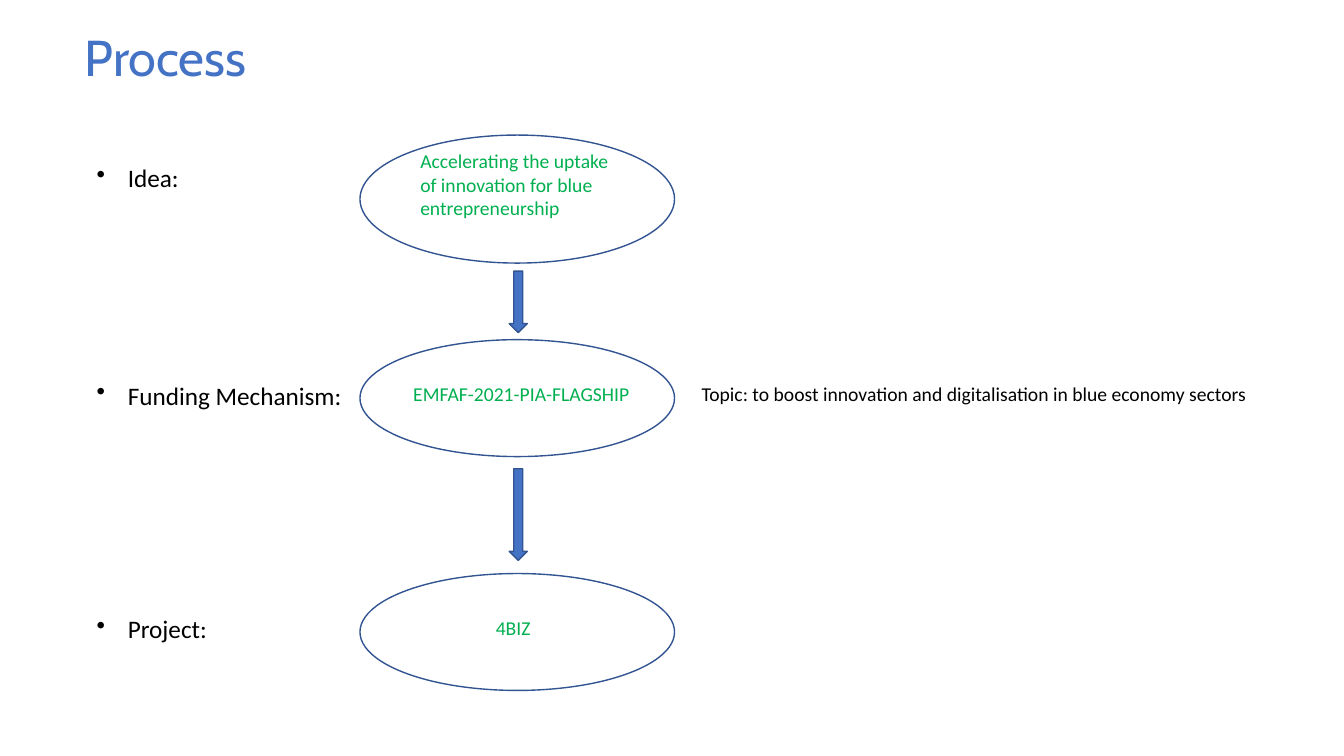
from pptx import Presentation
from pptx.dml.color import RGBColor
from pptx.enum.shapes import MSO_SHAPE
from pptx.enum.text import MSO_ANCHOR, MSO_AUTO_SIZE, PP_ALIGN
from pptx.util import Inches, Pt
from lxml import etree

BLUE = RGBColor(0x44, 0x72, 0xC4)
NAVY = RGBColor(0x32, 0x54, 0x91)
GREEN = RGBColor(0x00, 0xB0, 0x50)
BLACK = RGBColor(0x00, 0x00, 0x00)

MID = 5.14
ARROW = 0.18

deck = Presentation()
deck.slide_width = Inches(13.33)
deck.slide_height = Inches(7.5)
slide = deck.slides.add_slide(deck.slide_layouts[5])


def write(text, left, top, width, height, box=None, size=14, font="Calibri",
          color=BLACK, align=PP_ALIGN.LEFT, indent=0, bullet=False, wrap=True):
    """Fill box, or a new text box, with one formatted paragraph."""
    if box is None:
        box = slide.shapes.add_textbox(0, 0, 0, 0)
    box.left, box.top = Inches(left), Inches(top)
    box.width, box.height = Inches(width), Inches(height)
    frame = box.text_frame
    frame.text = text
    frame.word_wrap = wrap
    frame.auto_size = MSO_AUTO_SIZE.NONE
    frame.vertical_anchor = MSO_ANCHOR.TOP
    para = frame.paragraphs[0]
    para.alignment = align
    para.font.size = Pt(size)
    para.font.name = font
    para.font.color.rgb = color
    props = para._p.get_or_add_pPr()
    props.set("marL", str(Inches(indent)))
    if bullet:
        props.set("indent", str(-Inches(indent)))
        space = props.nsmap["a"]
        mark = etree.Element(f"{{{space}}}buChar", char="•")
        props.find(f"{{{space}}}defRPr").addprevious(mark)
    return para


def draw(kind, left, top, width, height):
    shape = slide.shapes.add_shape(
        kind, Inches(left), Inches(top), Inches(width), Inches(height))
    shape.shadow.inherit = False
    shape.line.color.rgb = NAVY
    shape.line.width = Pt(1)
    return shape


head = write("Process", 0.74, 0.28, 4.88, 0.83, box=slide.shapes.title,
             size=36, font="Cabin", color=BLUE)
head.line_spacing = 0.9

# Label, its top and width; oval top and height; oval text and its place
steps = [
    ("Idea:", 1.56, 1.09, 1.34, 1.27,
     "Accelerating the uptake of innovation for blue entrepreneurship",
     (3.57, 1.43, 2.67, 1.04), PP_ALIGN.LEFT),
    ("Funding Mechanism:", 3.72, 2.81, 3.37, 1.16,
     "EMFAF-2021-PIA-FLAGSHIP", (3.5, 3.74, 3.12, 0.31), PP_ALIGN.LEFT),
    ("Project:", 6.04, 1.43, 5.69, 1.16,
     "4BIZ", (3.28, 6.06, 3.12, 0.34), PP_ALIGN.CENTER),
]
for label, top, width, oval_top, oval_height, text, place, align in steps:
    oval = draw(MSO_SHAPE.OVAL, 3.57, oval_top, 3.12, oval_height)
    oval.fill.background()
    write(text, *place, color=GREEN, align=align, indent=0.5)
    write(label, 0.86, top, width, 0.4, size=18, indent=0.31,
          bullet=True, wrap=False)

write("Topic: to boost innovation and digitalisation in blue economy sectors",
      6.86, 3.74, 6.4, 0.34)

for top, height in [(2.69, 0.61), (4.65, 0.91)]:
    arrow = draw(MSO_SHAPE.DOWN_ARROW, MID - ARROW / 2, top, ARROW, height)
    arrow.fill.solid()
    arrow.fill.fore_color.rgb = BLUE

deck.save("out.pptx")
